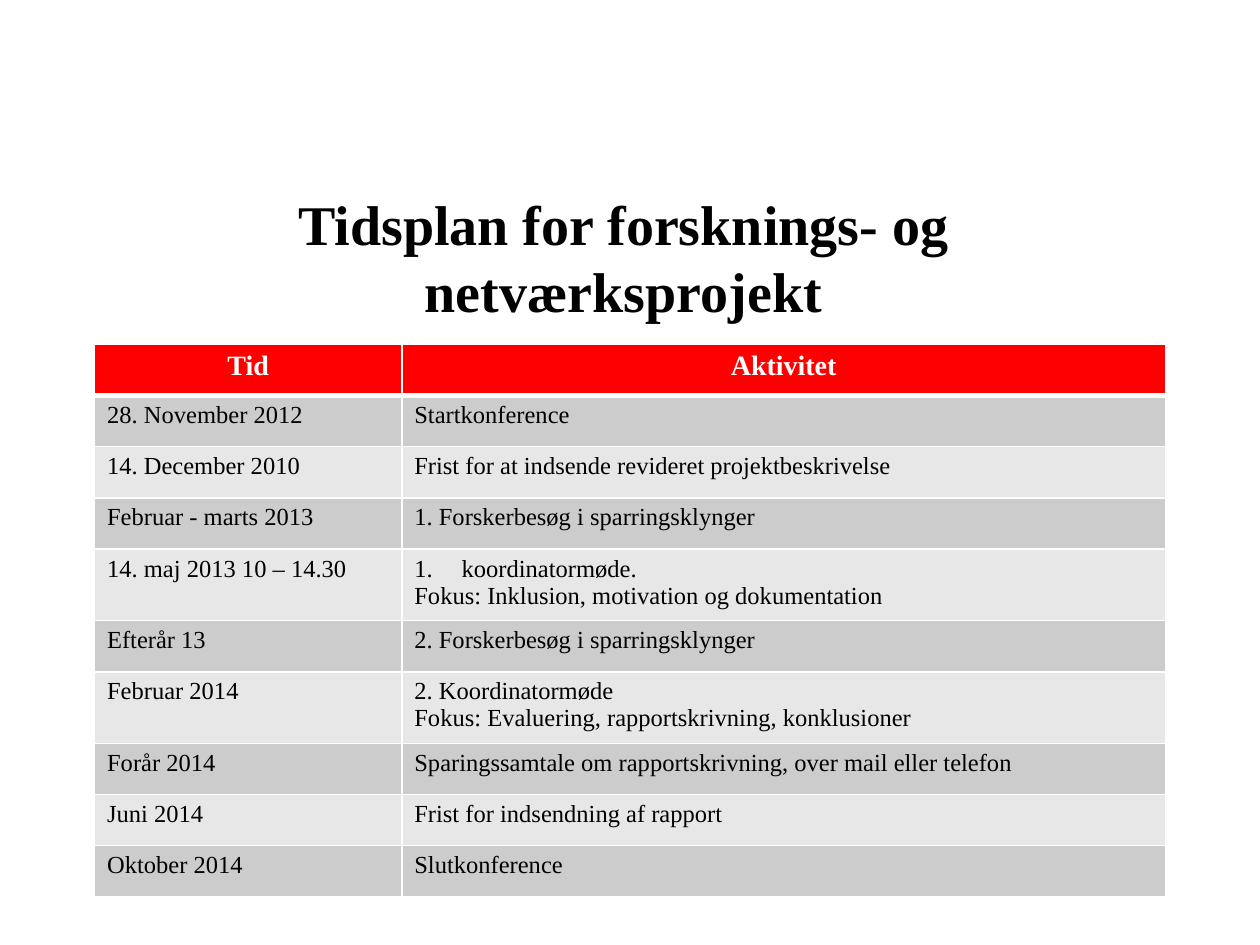
from lxml import etree
from pptx import Presentation
from pptx.dml.color import RGBColor
from pptx.enum.text import MSO_ANCHOR, PP_ALIGN
from pptx.oxml.ns import qn
from pptx.util import Pt

CENTER, LEFT = PP_ALIGN.CENTER, PP_ALIGN.LEFT
MIDDLE = MSO_ANCHOR.MIDDLE

BLACK = RGBColor(0x00, 0x00, 0x00)
WHITE = RGBColor(0xFF, 0xFF, 0xFF)
RED = RGBColor(0xFF, 0x00, 0x00)
DARK_BAND = RGBColor(0xCC, 0xCC, 0xCC)
LIGHT_BAND = RGBColor(0xE7, 0xE7, 0xE7)

FONT = "Times New Roman"
COLUMN_WIDTHS = (175.6, 436.4)
ROW_HEIGHT = 29.3
HANGING_INDENT = 27

TITLE = "Tidsplan for forsknings- og netværksprojekt"
HEADINGS = ("Tid", "Aktivitet")
NUMBERED_ITEM = "koordinatormøde."
SCHEDULE = [
    ("28. November 2012", ["Startkonference"]),
    ("14. December 2010", ["Frist for at indsende revideret projektbeskrivelse"]),
    ("Februar - marts 2013", ["1. Forskerbesøg i sparringsklynger"]),
    ("14. maj 2013 10 – 14.30",
     [NUMBERED_ITEM, "Fokus: Inklusion, motivation og dokumentation"]),
    ("Efterår 13", ["2. Forskerbesøg i sparringsklynger"]),
    ("Februar 2014",
     ["2. Koordinatormøde", "Fokus: Evaluering, rapportskrivning, konklusioner"]),
    ("Forår 2014", ["Sparingssamtale om rapportskrivning, over mail eller telefon"]),
    ("Juni 2014", ["Frist for indsendning af rapport"]),
    ("Oktober 2014", ["Slutkonference"]),
]


def add_run(paragraph, text, size, color, bold=False):
    run = paragraph.add_run()
    run.text = text
    run.font.name = FONT
    run.font.size = Pt(size)
    run.font.bold = bold
    run.font.color.rgb = color


def number_paragraph(paragraph):
    """Give the paragraph a hanging automatic number."""
    properties = paragraph._p.get_or_add_pPr()
    properties.set("marL", str(Pt(HANGING_INDENT)))
    properties.set("indent", str(-Pt(HANGING_INDENT)))
    etree.SubElement(properties, qn("a:buFont"), typeface="+mj-lt")
    etree.SubElement(properties, qn("a:buAutoNum"), type="arabicPeriod")


def set_borders(cell, top, bottom):
    """Draw white borders; top and bottom are widths in points."""
    properties = cell._tc.get_or_add_tcPr()
    for side, width in (("L", 1), ("R", 1), ("T", top), ("B", bottom)):
        line = etree.SubElement(properties, qn(f"a:ln{side}"), w=str(Pt(width)))
        fill = etree.SubElement(line, qn("a:solidFill"))
        etree.SubElement(fill, qn("a:srgbClr"), val=str(WHITE))


def fill_cell(cell, lines, fill, size, color, alignment=LEFT, bold=False, top=1, bottom=1):
    set_borders(cell, top, bottom)
    cell.fill.solid()
    cell.fill.fore_color.rgb = fill
    frame = cell.text_frame
    for index, line in enumerate(lines):
        paragraph = frame.add_paragraph() if index else frame.paragraphs[0]
        paragraph.alignment = alignment
        if line == NUMBERED_ITEM:
            number_paragraph(paragraph)
        add_run(paragraph, line, size, color, bold)


def add_title(slide):
    frame = slide.shapes.add_textbox(Pt(50.4), Pt(101.5), Pt(612), Pt(90)).text_frame
    frame.word_wrap = True
    frame.vertical_anchor = MIDDLE
    paragraph = frame.paragraphs[0]
    paragraph.alignment = CENTER
    add_run(paragraph, TITLE, 32, BLACK, bold=True)


def add_schedule(slide):
    row_count = len(SCHEDULE) + 1
    table = slide.shapes.add_table(
        row_count, len(COLUMN_WIDTHS), Pt(54), Pt(196.6),
        Pt(sum(COLUMN_WIDTHS)), Pt(ROW_HEIGHT * row_count)).table
    for column, width in zip(table.columns, COLUMN_WIDTHS):
        column.width = Pt(width)
    for row in table.rows:
        row.height = Pt(ROW_HEIGHT)
    for column, heading in enumerate(HEADINGS):
        fill_cell(table.cell(0, column), [heading], RED, 16, WHITE, CENTER,
                  bold=True, bottom=3)
    for row, (date, activity) in enumerate(SCHEDULE, start=1):
        band = DARK_BAND if row % 2 else LIGHT_BAND
        for column, lines in enumerate(([date], activity)):
            fill_cell(table.cell(row, column), lines, band, 14, BLACK,
                      top=3 if row == 1 else 1)


def main():
    presentation = Presentation()
    presentation.slide_width = Pt(720)
    presentation.slide_height = Pt(540)
    slide = presentation.slides.add_slide(presentation.slide_layouts[6])
    add_title(slide)
    add_schedule(slide)
    presentation.save("out.pptx")


if __name__ == "__main__":
    main()
